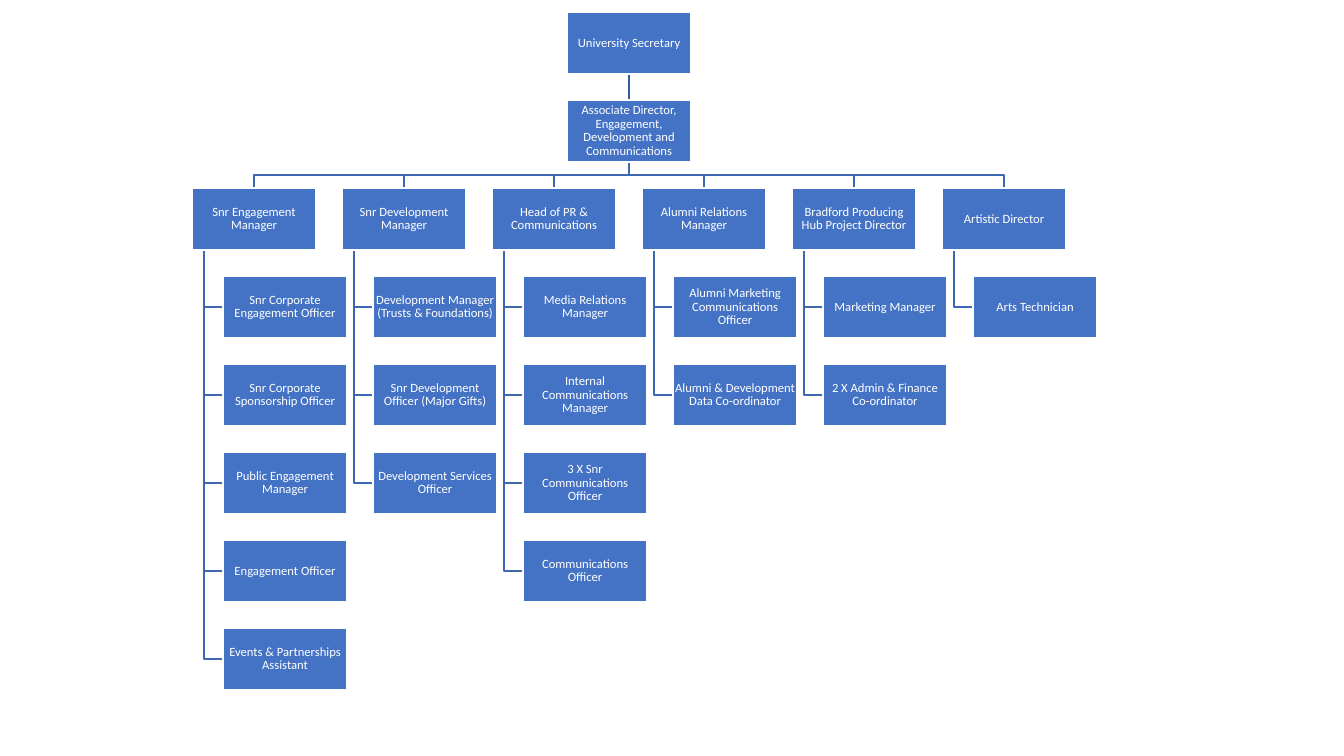
"""Build the engagement, development and communications organisation chart."""
from lxml import etree
from pptx import Presentation
from pptx.dml.color import RGBColor
from pptx.enum.shapes import MSO_CONNECTOR, MSO_SHAPE
from pptx.enum.text import MSO_ANCHOR, PP_ALIGN
from pptx.oxml.ns import qn
from pptx.util import Pt

LEADERS = [
    "University Secretary",
    "Associate Director, Engagement, Development and Communications",
]
TEAMS = [
    ("Snr Engagement Manager", [
        "Snr Corporate Engagement Officer",
        "Snr Corporate Sponsorship Officer",
        "Public Engagement Manager",
        "Engagement Officer",
        "Events & Partnerships Assistant",
    ]),
    ("Snr Development Manager", [
        "Development Manager (Trusts & Foundations)",
        "Snr Development Officer (Major Gifts)",
        "Development Services Officer",
    ]),
    ("Head of PR & Communications", [
        "Media Relations Manager",
        "Internal Communications Manager",
        "3 X Snr Communications Officer",
        "Communications Officer",
    ]),
    ("Alumni Relations Manager", [
        "Alumni Marketing Communications Officer",
        "Alumni & Development Data Co-ordinator",
    ]),
    ("Bradford Producing Hub Project Director", [
        "Marketing Manager",
        "2 X Admin & Finance Co-ordinator",
    ]),
    ("Artistic Director", ["Arts Technician"]),
]

BOX_BLUE = RGBColor(0x44, 0x72, 0xC4)
ELBOW_BLUE = RGBColor(0x3E, 0x67, 0xB2)
STEM_BLUE = RGBColor(0x36, 0x5B, 0x9D)
WHITE = RGBColor(0xFF, 0xFF, 0xFF)
RECTANGLE = MSO_SHAPE.RECTANGLE
STRAIGHT = MSO_CONNECTOR.STRAIGHT
BOTTOM_SIDE, TOP_SIDE = 2, 0

SCALE = 914400 / 100.8
SLIDE_WIDTH, SLIDE_HEIGHT = 1344, 756
BOX_WIDTH, BOX_HEIGHT = 124, 62
FIRST_LEFT, COLUMN_STEP = 192, 150
FIRST_TOP, ROW_STEP = 12, 88
REPORT_INDENT, TRUNK_INDENT = 31, 12
LEADER_LEFT = FIRST_LEFT + (len(TEAMS) - 1) * COLUMN_STEP // 2
MANAGER_ROW = len(LEADERS)


def px(length):
    return round(length * SCALE)


FRAME_FORMAT = {
    "word_wrap": True,
    "vertical_anchor": MSO_ANCHOR.MIDDLE,
    "margin_left": px(1),
    "margin_right": px(1),
    "margin_top": px(1),
    "margin_bottom": px(1),
}
PARAGRAPH_FORMAT = {"alignment": PP_ALIGN.CENTER, "line_spacing": 0.9}
FONT_FORMAT = {"name": "Calibri", "size": Pt(9)}


def set_attributes(target, values):
    for name, value in values.items():
        setattr(target, name, value)


def set_line(shape, color):
    shape.line.color.rgb = color
    shape.line.width = Pt(1)


def row_top(row):
    return FIRST_TOP + row * ROW_STEP


def add_box(slide, left, row, text):
    box = slide.shapes.add_shape(
        RECTANGLE, px(left), px(row_top(row)), px(BOX_WIDTH), px(BOX_HEIGHT))
    box.shadow.inherit = False
    box.fill.solid()
    box.fill.fore_color.rgb = BOX_BLUE
    set_line(box, WHITE)
    frame = box.text_frame
    frame.text = text
    paragraph = frame.paragraphs[0]
    set_attributes(frame, FRAME_FORMAT)
    set_attributes(paragraph, PARAGRAPH_FORMAT)
    set_attributes(paragraph.font, FONT_FORMAT)
    paragraph.font.color.rgb = WHITE
    return box


def add_elbow(slide, start, *points):
    builder = slide.shapes.build_freeform(*start, scale=SCALE)
    builder.add_line_segments(points, close=False)
    elbow = builder.convert_to_shape()
    elbow.shadow.inherit = False
    elbow.fill.background()
    set_line(elbow, ELBOW_BLUE)


def add_stem(slide):
    center = px(LEADER_LEFT + BOX_WIDTH / 2)
    stem = slide.shapes.add_connector(
        STRAIGHT, center, px(row_top(0) + BOX_HEIGHT), center, px(row_top(1)))
    set_line(stem, STEM_BLUE)
    etree.SubElement(stem._element.spPr, qn("a:effectLst"))
    return stem


def add_team_lines(slide, left, report_count):
    center = left + BOX_WIDTH // 2
    leader_center = LEADER_LEFT + BOX_WIDTH // 2
    leader_bottom = row_top(MANAGER_ROW - 1) + BOX_HEIGHT
    manager_top = row_top(MANAGER_ROW)
    branch = (leader_bottom + manager_top) // 2
    add_elbow(slide, (leader_center, leader_bottom), (leader_center, branch),
              (center, branch), (center, manager_top))
    trunk = left + TRUNK_INDENT
    for index in range(report_count):
        middle = row_top(MANAGER_ROW + 1 + index) + BOX_HEIGHT // 2
        add_elbow(slide, (trunk, manager_top + BOX_HEIGHT), (trunk, middle),
                  (left + REPORT_INDENT, middle))


def main():
    presentation = Presentation()
    presentation.slide_width = px(SLIDE_WIDTH)
    presentation.slide_height = px(SLIDE_HEIGHT)
    slide = presentation.slides.add_slide(presentation.slide_layouts[6])

    lefts = [FIRST_LEFT + index * COLUMN_STEP for index in range(len(TEAMS))]
    for left, (_, reports) in zip(lefts, TEAMS):
        add_team_lines(slide, left, len(reports))
    stem = add_stem(slide)

    secretary, director = [
        add_box(slide, LEADER_LEFT, row, title) for row, title in enumerate(LEADERS)]
    stem.begin_connect(secretary, BOTTOM_SIDE)
    stem.end_connect(director, TOP_SIDE)

    for left, (manager, reports) in zip(lefts, TEAMS):
        add_box(slide, left, MANAGER_ROW, manager)
        for row, report in enumerate(reports, MANAGER_ROW + 1):
            add_box(slide, left + REPORT_INDENT, row, report)

    presentation.save("out.pptx")


if __name__ == "__main__":
    main()
